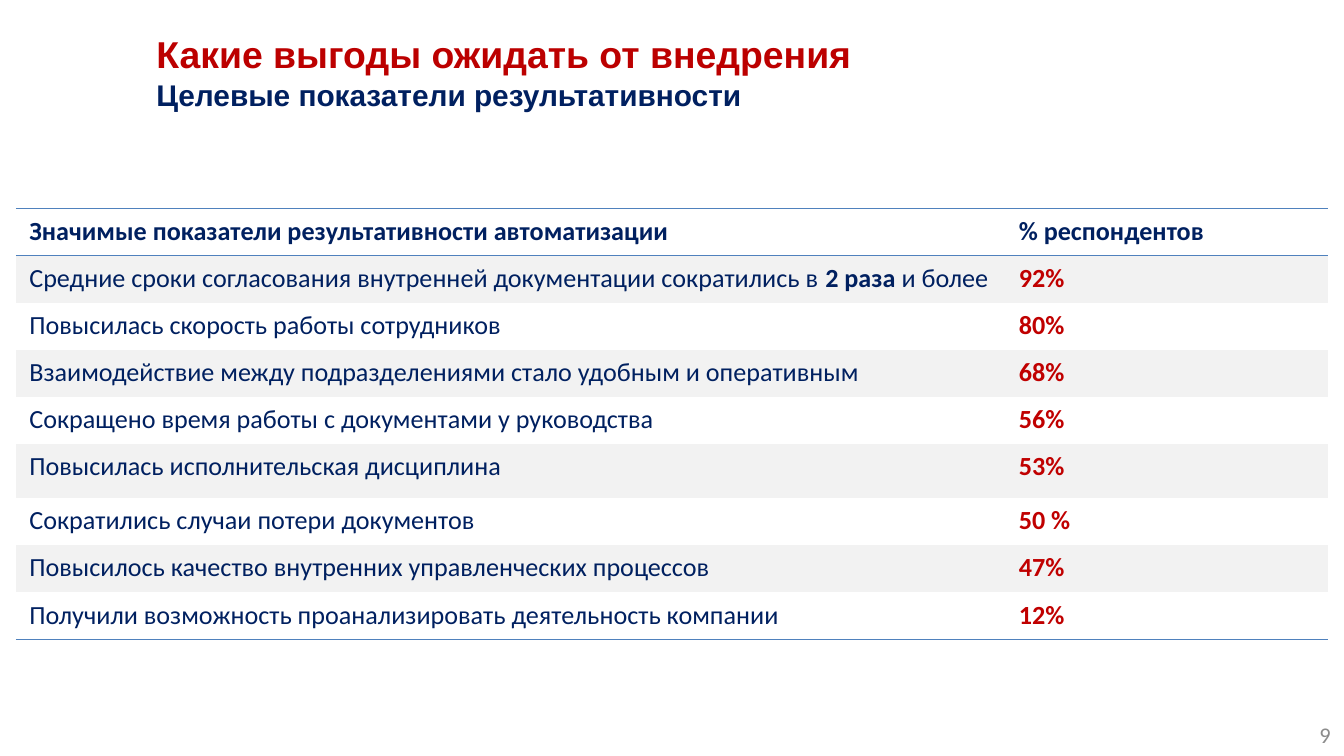
from lxml import etree
from pptx import Presentation
from pptx import util as u
from pptx.dml.color import RGBColor
from pptx.enum import text
from pptx.oxml.ns import qn

RED_TITLE = RGBColor(0xBC, 0x00, 0x00)
RED = RGBColor(0xC0, 0x00, 0x00)
NAVY = RGBColor(0x00, 0x20, 0x60)
BLUE = RGBColor(0x4F, 0x81, 0xBD)
BAND = RGBColor(0xF2, 0xF2, 0xF2)
WHITE = RGBColor(0xFF, 0xFF, 0xFF)
GREY = RGBColor(0x8C, 0x8C, 0x8C)

PLAIN_TABLE_STYLE = "{2D5ABB26-0587-4C30-8999-92F81FD0307C}"
ROW_HEIGHT = u.Cm(0.89)
TALL_ROW, TALL_HEIGHT = 5, u.Cm(1.02)

HEADER = ("Значимые показатели результативности автоматизации", "% респондентов")
# Every second part of an indicator split by "|" is bold.
RESULTS = [
    ("Средние сроки согласования внутренней документации сократились в |2 раза |и более", "92%"),
    ("Повысилась скорость работы сотрудников", "80%"),
    ("Взаимодействие между подразделениями стало удобным и оперативным", "68%"),
    ("Сокращено время работы с документами у руководства", "56%"),
    ("Повысилась исполнительская дисциплина", "53%"),
    ("Сократились случаи потери документов", "50 %"),
    ("Повысилось качество внутренних управленческих процессов", "47%"),
    ("Получили возможность проанализировать деятельность компании", "12%"),
]


def set_font(font, name, size, color, bold=False):
    font.name = name
    font.size = u.Pt(size)
    font.color.rgb = color
    font.bold = bold


def place(shape, left, top, width, height):
    shape.left, shape.top = u.Cm(left), u.Cm(top)
    shape.width, shape.height = u.Cm(width), u.Cm(height)


def add_title(page):
    title = page.shapes.title
    place(title, 2.7, 0.53, 22.9, 1.65)
    frame = title.text_frame
    frame.vertical_anchor = text.MSO_ANCHOR.MIDDLE
    frame.auto_size = text.MSO_AUTO_SIZE.NONE
    frame.text = "Какие выгоды ожидать от внедрения\nЦелевые показатели результативности"
    for para, size, color in zip(frame.paragraphs, (20, 16), (RED_TITLE, NAVY)):
        para.alignment = text.PP_ALIGN.LEFT
        set_font(para.font, "Arial", size, color, bold=True)


def add_border(cell, side):
    """Draw a 1 pt blue line on one side of a cell: "T" or "B"."""
    line = etree.SubElement(cell._tc.get_or_add_tcPr(), qn(f"a:ln{side}"), w=str(u.Pt(1)))
    fill = etree.SubElement(line, qn("a:solidFill"))
    etree.SubElement(fill, qn("a:srgbClr"), val=str(BLUE))


def fill_cell(cell, content, color, bold, background, sides):
    for side in sides:
        add_border(cell, side)
    cell.fill.solid()
    cell.fill.fore_color.rgb = background
    para = cell.text_frame.paragraphs[0]
    set_font(para.font, "Calibri", 14, color, bold)
    for index, part in enumerate(content.split("|")):
        span = para.add_run()
        span.text = part
        if index % 2:
            span.font.bold = True


def add_results_table(page):
    rows = [HEADER, *RESULTS]
    frame = page.shapes.add_table(len(rows), 2, u.Cm(0.3), u.Cm(3.94),
                                  u.Cm(24.8), ROW_HEIGHT * len(rows))
    table = frame.table
    table.first_row = table.horz_banding = False
    table._tbl.tblPr.find(qn("a:tableStyleId")).text = PLAIN_TABLE_STYLE
    table.columns[0].width, table.columns[1].width = u.Cm(18.7), u.Cm(6.1)

    borders = {0: "TB", len(rows) - 1: "B"}
    for index, (indicator, share) in enumerate(rows):
        table.rows[index].height = TALL_HEIGHT if index == TALL_ROW else ROW_HEIGHT
        header = index == 0
        background = BAND if index % 2 else WHITE
        sides = borders.get(index, "")
        fill_cell(table.cell(index, 0), indicator, NAVY, header, background, sides)
        fill_cell(table.cell(index, 1), share, NAVY if header else RED, True, background, sides)


def add_page_number(page, number):
    box = page.shapes.add_textbox(u.Cm(19.48), u.Cm(13.49), u.Cm(5.92), u.Cm(0.76))
    frame = box.text_frame
    frame.word_wrap = True
    frame.vertical_anchor = text.MSO_ANCHOR.MIDDLE
    para = frame.paragraphs[0]
    para.text = str(number)
    para.alignment = text.PP_ALIGN.RIGHT
    set_font(para.font, "Calibri", 12, GREY)


def main():
    deck = Presentation()
    deck.slide_width, deck.slide_height = u.Cm(25.4), u.Cm(14.28)
    page = deck.slides.add_slide(deck.slide_layouts[5])
    add_results_table(page)
    add_page_number(page, 9)
    add_title(page)
    deck.save("out.pptx")


if __name__ == "__main__":
    main()
